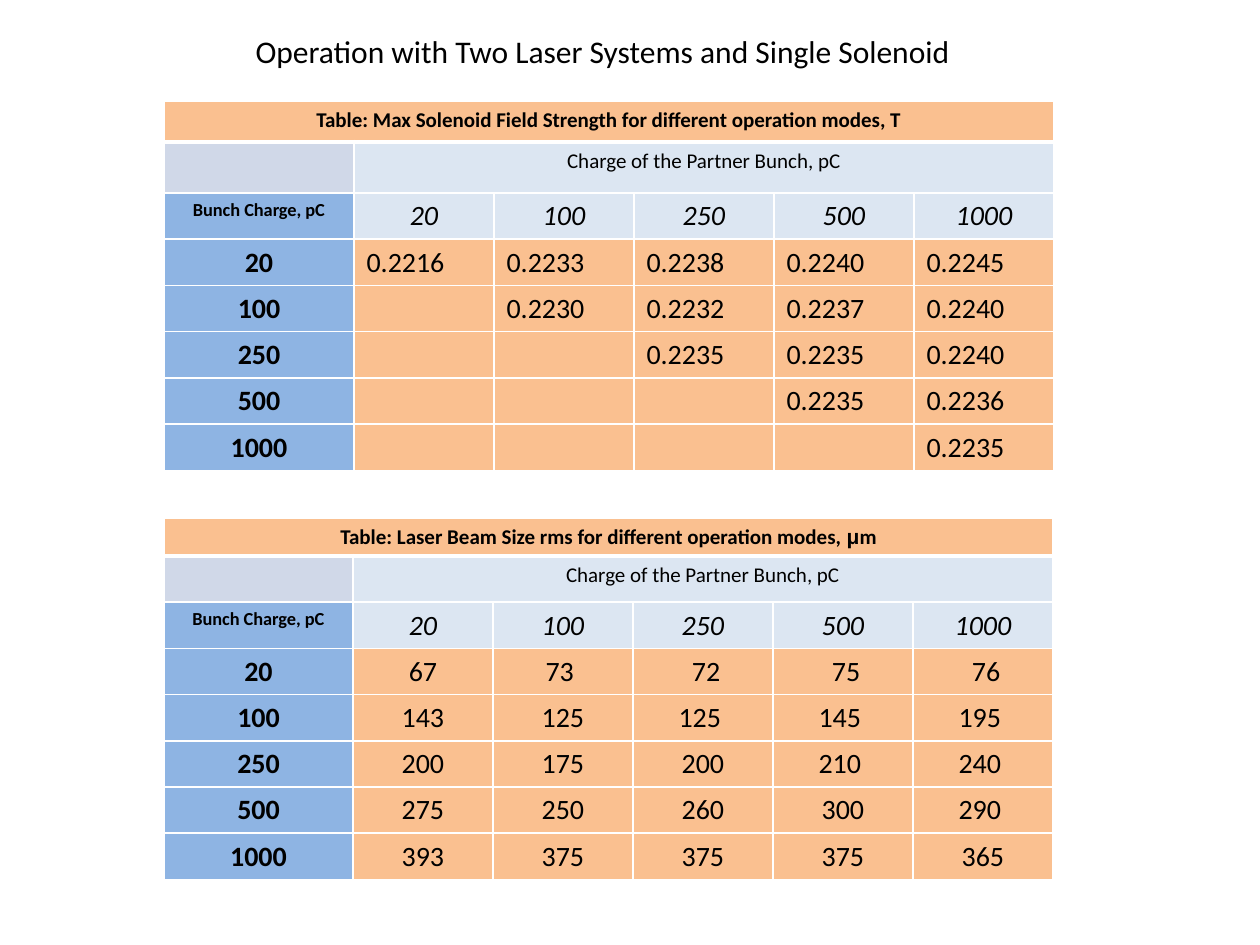
"""Build a slide with two tables of laser operation settings by bunch charge."""
import lxml.etree
import pptx
import pptx.dml.color
import pptx.enum.text
import pptx.oxml.ns
import pptx.util

PX = 914400 // 126
COLORS = {
    "text": "000000",
    "line": "FFFFFF",
    "value": "FAC090",
    "corner": "D0D8E8",
    "partner": "DCE6F2",
    "charge": "8EB4E3",
}
ALIGN = pptx.enum.text.PP_ALIGN
CHARGES = ["20", "100", "250", "500", "1000"]
FIELDS = [
    ["0.2216", "0.2233", "0.2238", "0.2240", "0.2245"],
    ["", "0.2230", "0.2232", "0.2237", "0.2240"],
    ["", "", "0.2235", "0.2235", "0.2240"],
    ["", "", "", "0.2235", "0.2236"],
    ["", "", "", "", "0.2235"],
]
BEAM_SIZES = [
    ["67", "73 ", " 72", " 75", " 76"],
    ["143", "125", "125 ", "145 ", "195 "],
    ["200", "175", "200", "210 ", "240 "],
    ["275", "250", "260", "300", "290 "],
    ["393", "375", "375", "375", "365"],
]


def px(n):
    """Turn whole pixels into EMU."""
    return pptx.util.Emu(n * PX)


def rgb(name):
    """Look up a named colour."""
    return pptx.dml.color.RGBColor.from_string(COLORS[name])


def write(tf, text, size=16, bold=False, italic=False, align=ALIGN.CENTER, font="Calibri"):
    """Append a formatted run to the first paragraph."""
    p = tf.paragraphs[0]
    p.alignment = align
    if not text:
        end = lxml.etree.SubElement(p._p, pptx.oxml.ns.qn("a:endParaRPr"))
        end.set("sz", str(size * 100))
        return
    r = p.add_run()
    r.text = text
    r.font.name = font
    r.font.size = pptx.util.Pt(size)
    r.font.bold = bold
    r.font.italic = italic
    r.font.color.rgb = rgb("text")


def add_border(cell, side, width):
    """Give one side of a cell a solid line."""
    qn = pptx.oxml.ns.qn
    tcPr = cell._tc.get_or_add_tcPr()
    ln = lxml.etree.SubElement(tcPr, qn(f"a:ln{side}"))
    ln.set("w", str(pptx.util.Pt(width)))
    fill = lxml.etree.SubElement(ln, qn("a:solidFill"))
    lxml.etree.SubElement(fill, qn("a:srgbClr")).set("val", COLORS["line"])


def fill_cell(cell, color, text="", **fmt):
    """Set a cell's fill and text."""
    cell.fill.solid()
    cell.fill.fore_color.rgb = rgb(color)
    write(cell.text_frame, text, **fmt)


def add_grid(s, top, widths, heights):
    """Add a plain table with white borders and a heavy line under its caption."""
    frame = s.shapes.add_table(len(heights), len(widths), px(164), px(top),
                               px(sum(widths)), px(sum(heights)))
    table = frame.table
    table.first_row = table.horz_banding = False
    for col, width in zip(table.columns, widths):
        col.width = px(width)
    for row, height in zip(table.rows, heights):
        row.height = px(height)
    for i, row in enumerate(table.rows):
        for cell in row.cells:
            for side in "LRTB":
                heavy = (i, side) in ((0, "B"), (1, "T"))
                add_border(cell, side, 3 if heavy else 1)
    return table


def add_charge_table(s, top, widths, heights, caption, values, align):
    """Add a table of values by bunch charge and partner charge."""
    table = add_grid(s, top, widths, heights)
    last = len(widths) - 1
    table.cell(0, 0).merge(table.cell(0, last))
    table.cell(1, 1).merge(table.cell(1, last))

    first, *rest = caption
    fill_cell(table.cell(0, 0), "value", first, size=12, bold=True)
    for text, font in rest:
        write(table.cell(0, 0).text_frame, text, size=12, bold=True, font=font)
    fill_cell(table.cell(1, 0), "corner")
    fill_cell(table.cell(1, 1), "partner", "Charge of the Partner Bunch, pC", size=12)
    fill_cell(table.cell(2, 0), "charge", "Bunch Charge, pC", size=10.5, bold=True)

    for i, charge in enumerate(CHARGES):
        fill_cell(table.cell(2, i + 1), "partner", charge, italic=True)
        fill_cell(table.cell(i + 3, 0), "charge", charge, bold=True)
        for j, value in enumerate(values[i]):
            fill_cell(table.cell(i + 3, j + 1), "value", value, align=align)


def add_title(s, text):
    """Place and format the slide title."""
    sp = s.shapes.title
    sp.left, sp.top, sp.width, sp.height = px(243), px(26), px(728), px(50)
    tf = sp.text_frame
    tf.word_wrap = False
    tf.auto_size = pptx.enum.text.MSO_AUTO_SIZE.SHAPE_TO_FIT_TEXT
    tf.vertical_anchor = pptx.enum.text.MSO_ANCHOR.TOP
    write(tf, text, size=18, align=ALIGN.LEFT)


def main():
    """Build and save the slide."""
    prs = pptx.Presentation()
    prs.slide_width, prs.slide_height = px(1260), px(945)
    s = prs.slides.add_slide(prs.slide_layouts[5])
    add_title(s, "Operation with Two Laser Systems and Single Solenoid")
    add_charge_table(
        s, 101, [190] + [140] * 5, [41, 51] + [46] * 6,
        ["Table: Max Solenoid Field Strength for different operation modes, T"],
        FIELDS, ALIGN.LEFT)
    add_charge_table(
        s, 518, [189] + [140] * 5, [37] + [46] * 7,
        ["Table: Laser Beam Size rms for different operation modes, ",
         ("μ", "Arial"), ("m", "Calibri")],
        BEAM_SIZES, ALIGN.CENTER)
    prs.save("out.pptx")


if __name__ == "__main__":
    main()
